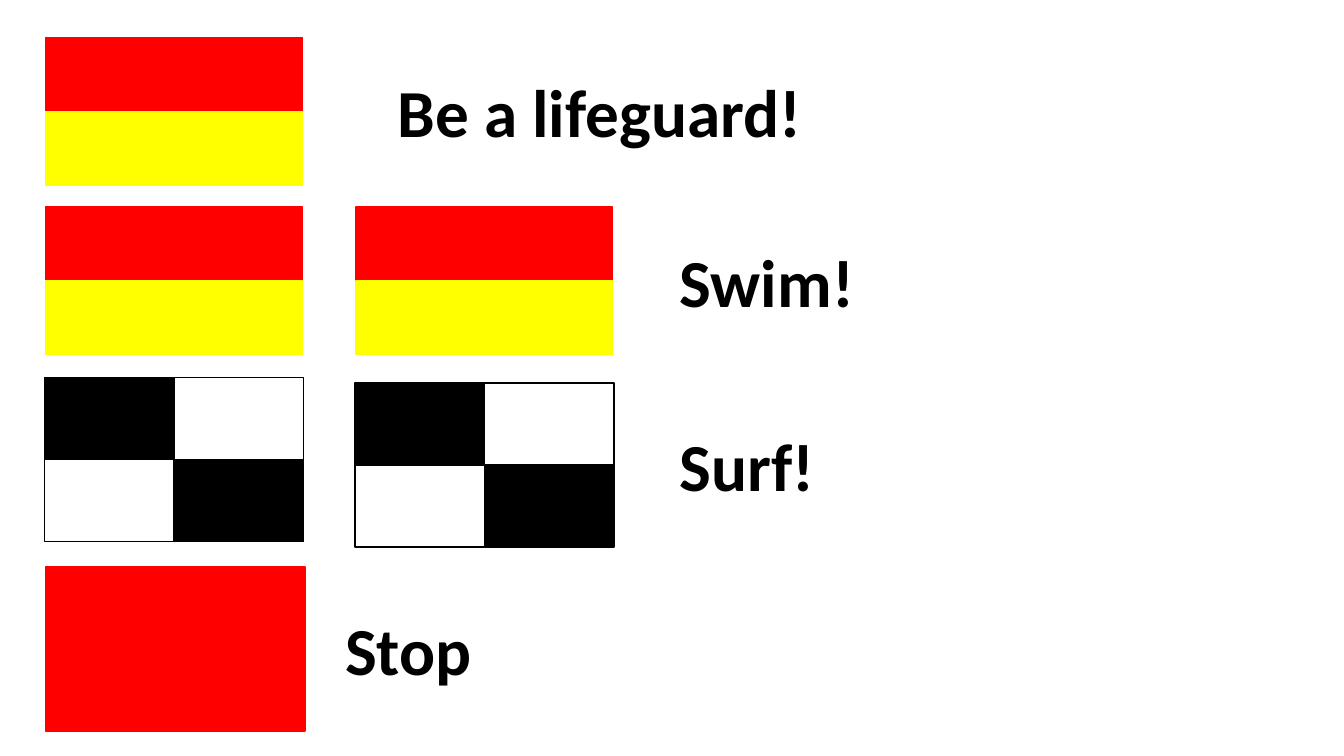
from pptx import Presentation
from pptx import util as u
from pptx.dml.color import RGBColor
from pptx.enum import shapes, text

PX = 4572  # 200 px to the inch
SLIDE_SIZE = (2000, 1125)
RED, YELLOW, BLACK, WHITE = "FF0000", "FFFF00", "000000", "FFFFFF"

# Each design: cell width, cell height, rows of (fill, line) colours
LIFEGUARD = (382, 110, [[(RED, RED)], [(YELLOW, YELLOW)]])
SURF = (193, 122, [[(BLACK, BLACK), (WHITE, BLACK)],
                   [(WHITE, BLACK), (BLACK, BLACK)]])
STOP = (386, 244, [[(RED, RED)]])

FLAGS = [  # design, left, top
    (LIFEGUARD, 68, 56),
    (LIFEGUARD, 68, 308),
    (LIFEGUARD, 530, 308),
    (SURF, 66, 562),
    (SURF, 528, 570),
    (STOP, 68, 844),
]

LABEL_SIZE = (706, 218)
LABELS = [  # wording, left, top
    ("Be a lifeguard!", 572, 56),
    ("Swim!", 992, 308),
    ("Surf!", 992, 582),
    ("Stop", 494, 856),
]
FRAME_FORMAT = {
    "word_wrap": True,
    "vertical_anchor": text.MSO_ANCHOR.MIDDLE,
    "margin_left": 20 * PX,
    "margin_top": 20 * PX,
    "margin_right": 20 * PX,
    "margin_bottom": 20 * PX,
}
FONT_FORMAT = {"name": "Calibri", "size": u.Pt(36), "bold": True}


def color(value):
    return RGBColor.from_string(value)


def emu(*lengths):
    return [u.Emu(length * PX) for length in lengths]


def set_format(target, values):
    for name, value in values.items():
        setattr(target, name, value)


def add_cell(parent, left, top, width, height, fill, line):
    shape = parent.add_shape(shapes.MSO_SHAPE.RECTANGLE,
                             *emu(left, top, width, height))
    shape.shadow.inherit = False
    shape.fill.solid()
    shape.fill.fore_color.rgb = color(fill)
    shape.line.color.rgb = color(line)
    shape.line.width = u.Pt(0.75)


def add_flag(slide, design, left, top):
    """Lay out a design's cells as a grid, grouped if there are several."""
    width, height, rows = design
    parent = slide.shapes
    if len(rows) > 1:
        parent = parent.add_group_shape().shapes
    for row, cells in enumerate(rows):
        for column, (fill, line) in enumerate(cells):
            add_cell(parent, left + column * width, top + row * height,
                     width, height, fill, line)


def add_label(slide, wording, left, top):
    frame = slide.shapes.add_textbox(*emu(left, top, *LABEL_SIZE)).text_frame
    set_format(frame, FRAME_FORMAT)
    paragraph = frame.paragraphs[0]
    run = paragraph.add_run()
    run.text = wording
    set_format(run.font, FONT_FORMAT)
    run.font.color.rgb = color(BLACK)


def main():
    presentation = Presentation()
    presentation.slide_width, presentation.slide_height = emu(*SLIDE_SIZE)
    slide = presentation.slides.add_slide(presentation.slide_layouts[6])
    for flag in FLAGS:
        add_flag(slide, *flag)
    for label in LABELS:
        add_label(slide, *label)
    presentation.save("out.pptx")


if __name__ == "__main__":
    main()
